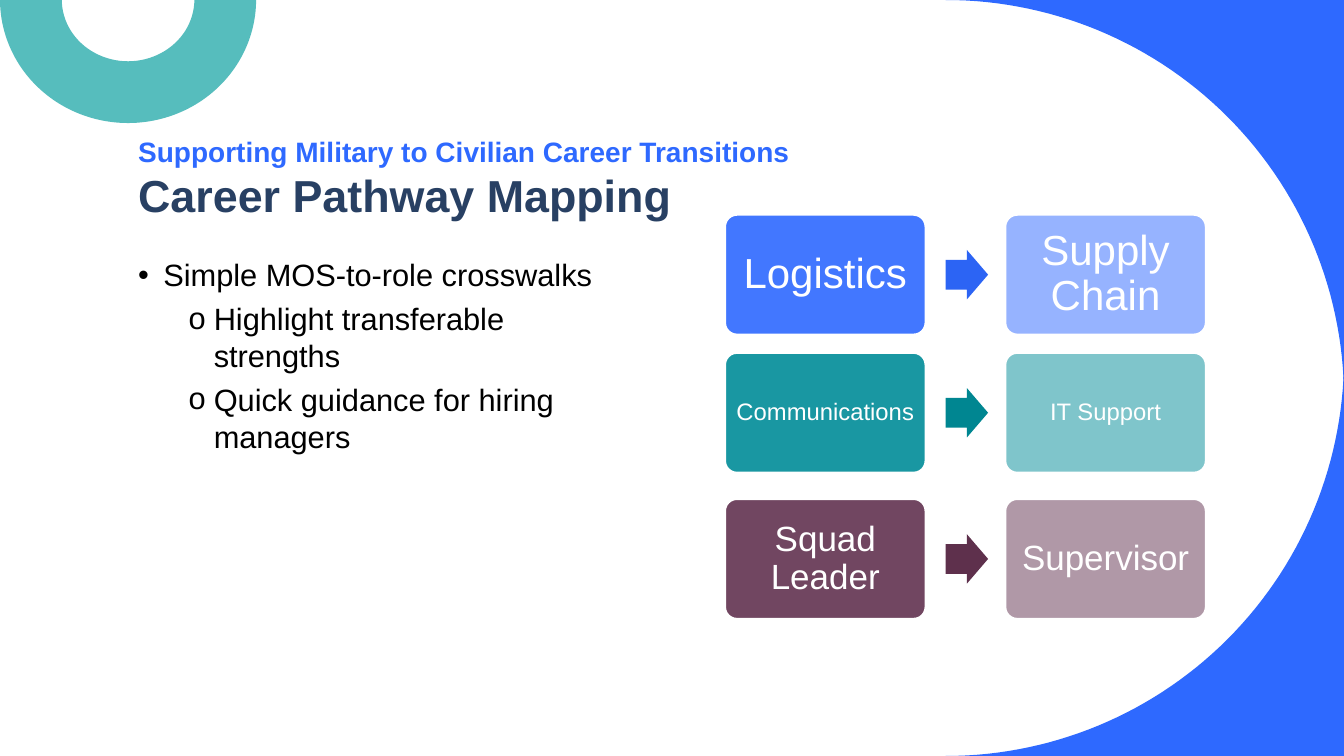
from dataclasses import dataclass
from math import cos, pi, sin

from lxml.etree import SubElement
from pptx import Presentation
from pptx.dml.color import RGBColor as Rgb
from pptx.enum.shapes import MSO_SHAPE as Shape
from pptx.enum.text import MSO_ANCHOR as Anchor, MSO_AUTO_SIZE as AutoSize, PP_ALIGN as Align
from pptx.oxml.ns import qn
from pptx.util import Inches, Pt


@dataclass(frozen=True)
class Theme:
    font: str = "Arial"
    blue: Rgb = Rgb.from_string("2E69FF")
    teal: Rgb = Rgb.from_string("008C98")
    plum: Rgb = Rgb.from_string("623250")
    ring: Rgb = Rgb.from_string("56BDBD")
    navy: Rgb = Rgb.from_string("284063")
    white: Rgb = Rgb.from_string("FFFFFF")
    black: Rgb = Rgb.from_string("000000")
    arrows: tuple = tuple(map(Rgb.from_string, ("2C64F4", "008691", "5E304C")))
    kicker_size: Pt = Pt(20)
    title_size: Pt = Pt(32)
    body_size: Pt = Pt(22)
    card_sizes: tuple = (Pt(30), Pt(17), Pt(25))


def paint(shape, color, opacity=100):
    """Give a shape a flat fill without shadow or line."""
    shape.shadow.inherit = False
    shape.fill.solid()
    shape.fill.fore_color.rgb = color
    shape.line.fill.background()
    if opacity < 100:
        rgb = shape.fill._xPr.find(f".//{qn('a:srgbClr')}")
        SubElement(rgb, qn("a:alpha"), val=str(opacity * 1000))


def style(font, size, color, bold=False):
    font.name, font.size, font.bold = theme.font, size, bold
    font.color.rgb = color


theme = Theme()
deck = Presentation()
deck.slide_width, deck.slide_height = Inches(13.33), Inches(7.5)
page = deck.slides.add_slide(deck.slide_layouts[1])

# Blue corners outside a quarter circle, top then bottom
radius, arc_left, steps = 3.95, 9.38, 60
for corner_y, center_y, direction in ((0, radius, -1), (7.5, 7.5 - radius, 1)):
    arc = [
        (Inches(arc_left + radius * sin(angle)),
         Inches(center_y + direction * radius * cos(angle)))
        for angle in (pi / 2 * step / steps for step in range(steps + 1))
    ]
    builder = page.shapes.build_freeform(Inches(arc_left + radius), Inches(corner_y))
    builder.add_line_segments(arc, close=True)
    paint(builder.convert_to_shape(), theme.blue)

ring = page.shapes.add_shape(
    Shape.BLOCK_ARC, Inches(0), Inches(-1.23), Inches(2.54), Inches(2.45))
ring.rotation = 180
paint(ring, theme.ring)

# Title with a kicker line above it
title = page.shapes.title
title.left, title.top, title.width, title.height = map(Inches, (1.27, 1.27, 10.69, 0.98))
title.text_frame.auto_size = AutoSize.NONE
title.text_frame.vertical_anchor = Anchor.BOTTOM
para = title.text_frame.paragraphs[0]
para.alignment = Align.LEFT
kicker = para.add_run()
kicker.text = "Supporting Military to Civilian Career Transitions"
style(kicker.font, theme.kicker_size, theme.blue, bold=True)
para.add_line_break()
heading = para.add_run()
heading.text = "Career Pathway Mapping"
style(heading.font, theme.title_size, theme.navy, bold=True)

# Bulleted list
body = page.placeholders[1]
body.left, body.top, body.width, body.height = map(Inches, (1.27, 2.49, 5.16, 3.83))
body.text_frame.auto_size = AutoSize.NONE
points = (
    (0, "Simple MOS-to-role crosswalks"),
    (1, "Highlight transferable strengths"),
    (1, "Quick guidance for hiring managers"),
)
for index, (level, text) in enumerate(points):
    para = body.text_frame.add_paragraph() if index else body.text_frame.paragraphs[0]
    para.text, para.level = text, level
    para.space_before = Pt(5 * level)
    props = para._p.get_or_add_pPr()
    props.set("marL", str(Inches(0.25 + 0.5 * level)))
    props.set("indent", str(Inches(-0.25)))
    SubElement(props, qn("a:buFont"), typeface=theme.font)
    SubElement(props, qn("a:buChar"), char="•o"[level])
    style(para.font, theme.body_size, theme.black)

# Military role, arrow, civilian role
pathways = (
    (2.13, theme.blue, 0.12, "Logistics", "Supply Chain"),
    (3.5, theme.teal, 0.07, "Communications", "IT Support"),
    (4.95, theme.plum, 0.1, "Squad Leader", "Supervisor"),
)
for (top, color, inset, military, civilian), arrow_color, size in zip(
        pathways, theme.arrows, theme.card_sizes):
    for left, role, opacity in ((7.19, military, 90), (9.97, civilian, 50)):
        card = page.shapes.add_shape(
            Shape.ROUNDED_RECTANGLE, Inches(left), Inches(top), Inches(1.99), Inches(1.19))
        card.adjustments[0] = 0.1
        paint(card, color, opacity)
        card.line.color.rgb, card.line.width = theme.white, Pt(1.5)
        frame = card.text_frame
        frame.word_wrap, frame.vertical_anchor = True, Anchor.MIDDLE
        frame.margin_left = frame.margin_right = Inches(inset)
        frame.margin_top = frame.margin_bottom = Inches(inset)
        para = frame.paragraphs[0]
        para.text, para.alignment, para.line_spacing = role, Align.CENTER, 0.9
        style(para.font, size, theme.white)
    arrow = page.shapes.add_shape(
        Shape.RIGHT_ARROW, Inches(9.38), Inches(top + 0.35), Inches(0.42), Inches(0.49))
    arrow.adjustments[0] = 0.6
    paint(arrow, arrow_color)

deck.save("out.pptx")
